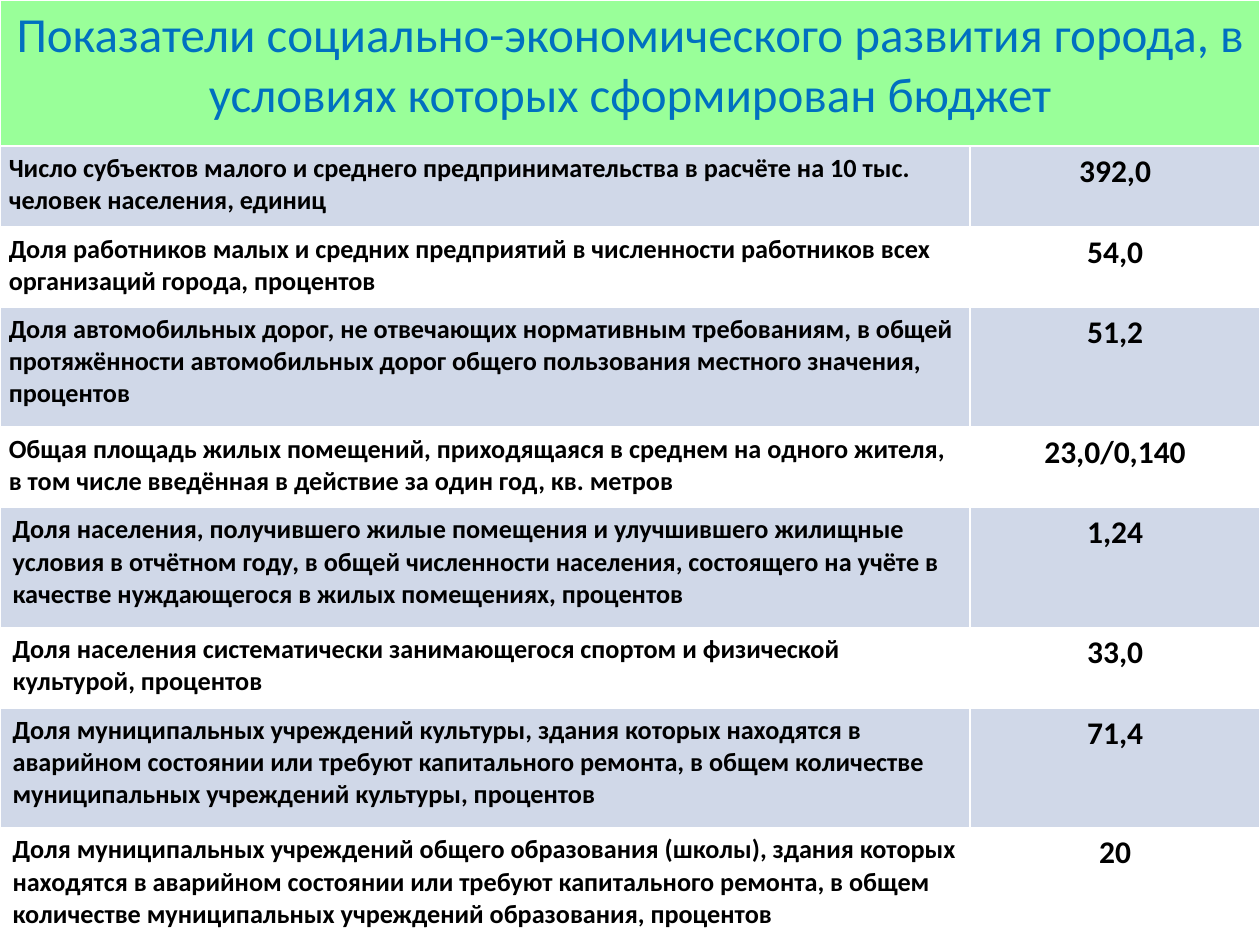
from dataclasses import dataclass

from pptx import Presentation
from pptx.dml.color import RGBColor
from pptx.enum.text import PP_ALIGN as Align
from pptx.util import Inches, Pt

COLORS = {
    "title": "0070C0",
    "header": "99FF99",
    "band": "D0D8E8",
    "plain": "FFFFFF",
    "text": "000000",
}
FONT = "Calibri"
TITLE = "Показатели социально-экономического развития города, в условиях которых сформирован бюджет"
COLUMN_WIDTHS = (7.7, 2.3)
HEADER_HEIGHT = 1.16
NARROW_MARGIN = 0.07
WIDE_MARGIN = 0.1


@dataclass
class Indicator:
    label: str
    value: str
    height: float = 0.64
    margin: float = NARROW_MARGIN


INDICATORS = [
    Indicator("Число субъектов малого и среднего предпринимательства в расчёте на 10 тыс. "
              "человек населения, единиц", "392,0"),
    Indicator("Доля работников малых и средних предприятий в численности работников всех "
              "организаций города, процентов", "54,0"),
    Indicator("Доля автомобильных дорог, не отвечающих нормативным требованиям, в общей "
              "протяжённости автомобильных дорог общего пользования местного значения, "
              "процентов", "51,2", 0.95),
    Indicator("Общая площадь жилых помещений, приходящаяся в среднем на одного жителя, "
              "в том числе введённая в действие за один год, кв. метров", "23,0/0,140"),
    Indicator("Доля населения, получившего жилые помещения и улучшившего жилищные "
              "условия в отчётном году, в общей численности населения, состоящего на учёте в "
              "качестве нуждающегося в жилых помещениях, процентов", "1,24", 0.95, WIDE_MARGIN),
    Indicator("Доля населения систематически занимающегося спортом и физической "
              "культурой, процентов", "33,0", margin=WIDE_MARGIN),
    Indicator("Доля муниципальных учреждений культуры, здания которых находятся в "
              "аварийном состоянии или требуют капитального ремонта, в общем количестве "
              "муниципальных учреждений культуры, процентов", "71,4", 0.95, WIDE_MARGIN),
    Indicator("Доля муниципальных учреждений общего образования (школы), здания которых "
              "находятся в аварийном состоянии или требуют капитального ремонта, в общем "
              "количестве муниципальных учреждений образования, процентов", "20", 0.95, WIDE_MARGIN),
]


def fill_cell(cell, text: str, size: int, fill: str, align: Align = Align.CENTER,
              color: str = "text", bold: bool = True, margin: float = NARROW_MARGIN) -> None:
    cell.fill.solid()
    cell.fill.fore_color.rgb = RGBColor.from_string(COLORS[fill])
    cell.margin_left = cell.margin_right = Inches(margin)
    cell.margin_top = cell.margin_bottom = Inches(0.05)
    cell.text = text
    paragraph = cell.text_frame.paragraphs[0]
    paragraph.alignment = align
    paragraph.font.name = FONT
    paragraph.font.size = Pt(size)
    paragraph.font.bold = bold
    paragraph.font.color.rgb = RGBColor.from_string(COLORS[color])


def add_indicator_table(slide, indicators: list[Indicator]) -> None:
    heights = [HEADER_HEIGHT] + [indicator.height for indicator in indicators]
    table = slide.shapes.add_table(
        len(heights), len(COLUMN_WIDTHS), 0, 0,
        Inches(sum(COLUMN_WIDTHS)), Inches(sum(heights))).table
    for column, width in zip(table.columns, COLUMN_WIDTHS):
        column.width = Inches(width)
    for row, height in zip(table.rows, heights):
        row.height = Inches(height)

    header = table.cell(0, 0)
    header.merge(table.cell(0, 1))
    fill_cell(header, TITLE, 28, "header", color="title", bold=False)

    for number, indicator in enumerate(indicators, start=1):
        fill = "band" if number % 2 else "plain"
        fill_cell(table.cell(number, 0), indicator.label, 15, fill, Align.LEFT,
                  margin=indicator.margin)
        fill_cell(table.cell(number, 1), indicator.value, 18, fill, margin=indicator.margin)


def main() -> None:
    presentation = Presentation()
    presentation.slide_width = Inches(10)
    presentation.slide_height = Inches(7.5)
    slide = presentation.slides.add_slide(presentation.slide_layouts[6])
    add_indicator_table(slide, INDICATORS)
    presentation.save("out.pptx")


if __name__ == "__main__":
    main()
